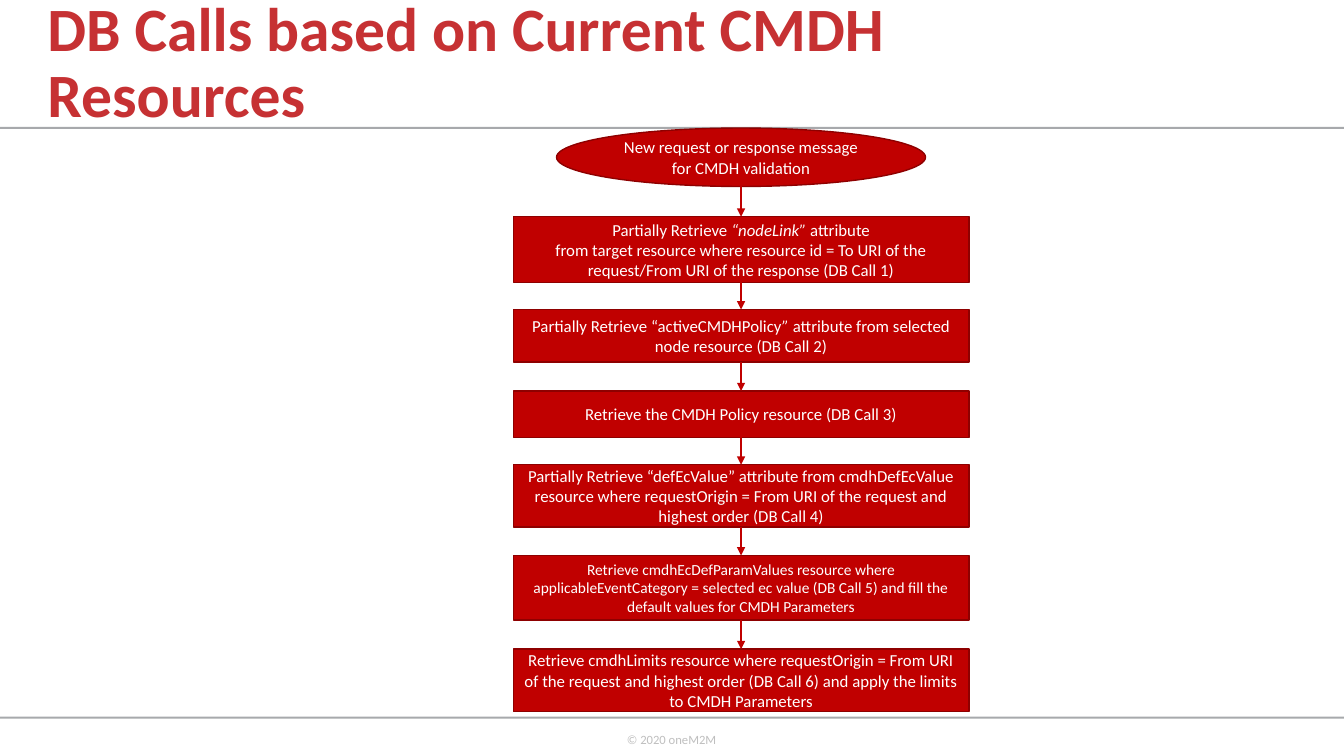
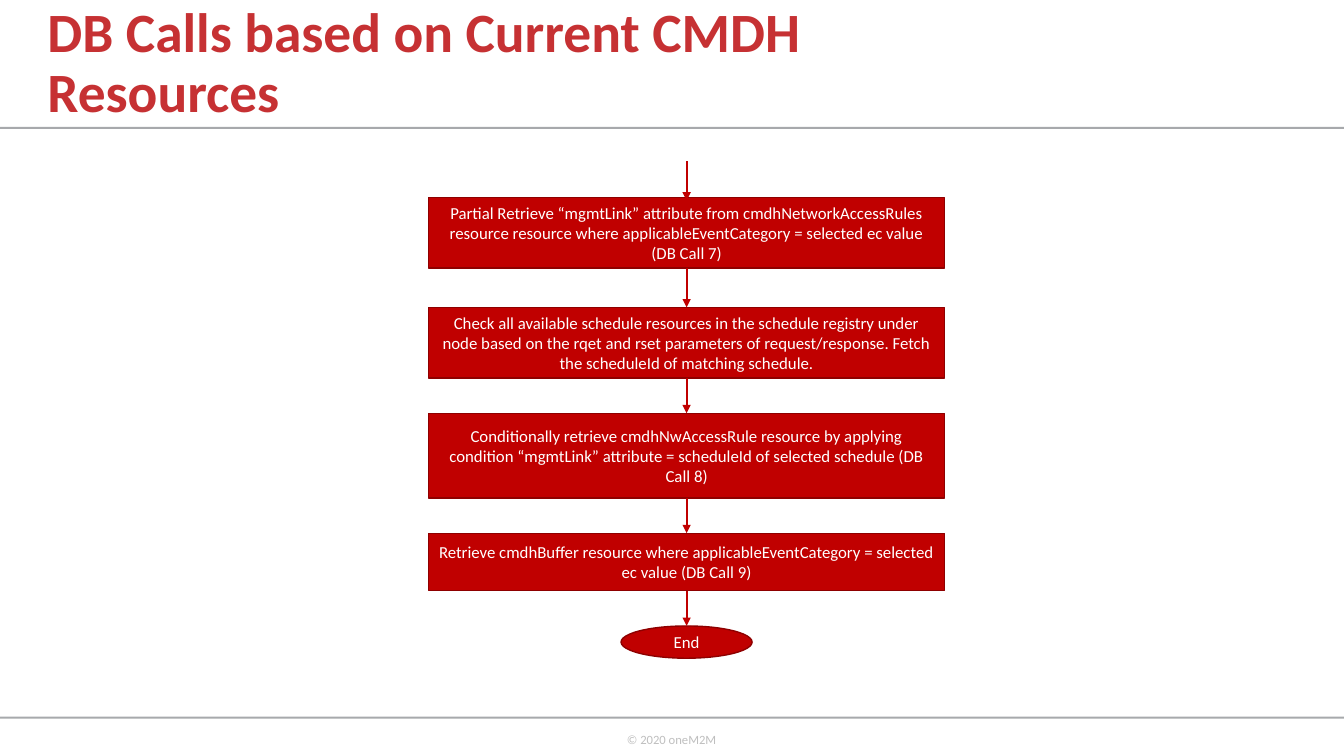
from lxml import etree
from pptx import Presentation
from pptx.dml.color import RGBColor
from pptx.enum.shapes import MSO_CONNECTOR, MSO_SHAPE
from pptx.enum.text import MSO_ANCHOR, PP_ALIGN
from pptx.oxml.ns import qn
from pptx.util import Emu, Pt

PX = 9144
WIDTH, HEIGHT = 1333, 750
FONT = "Calibri"
TITLE = "DB Calls based on Current CMDH Resources"
FOOTER = "© 2020 oneM2M"

TITLE_RED = RGBColor(0xC6, 0x31, 0x33)
BOX_RED = RGBColor(0xC0, 0x00, 0x00)
EDGE_RED = RGBColor(0x8E, 0x00, 0x00)
RULE_GREY = RGBColor(0xA7, 0xA9, 0xAC)
FOOTER_GREY = RGBColor(0xBF, 0xBF, 0xBF)
WHITE = RGBColor(0xFF, 0xFF, 0xFF)

OVAL, RECT = MSO_SHAPE.OVAL, MSO_SHAPE.RECTANGLE

REQUEST_STEPS = [
    (OVAL, 127, 366, 58, 12, "New request or response message for CMDH validation"),
    (RECT, 215, 452, 65, 12,
     "Partially Retrieve *“nodeLink” *attribute\nfrom target resource where resource id = "
     "To URI of the request/From URI of the response (DB Call 1)"),
    (RECT, 307, 452, 52, 12,
     "Partially Retrieve “activeCMDHPolicy*” *attribute from selected node resource (DB Call 2)"),
    (RECT, 388, 452, 46, 12, "Retrieve the CMDH Policy resource (DB Call 3)"),
    (RECT, 461, 452, 62, 12,
     "Partially Retrieve “defEcValue” attribute from cmdhDefEcValue resource where "
     "requestOrigin = From URI of the request and highest order (DB Call 4)"),
    (RECT, 551, 452, 64, 11,
     "Retrieve cmdhEcDefParamValues resource where applicableEventCategory = selected ec value "
     "(DB Call 5) and fill the default values for CMDH Parameters"),
    (RECT, 644, 452, 62, 12,
     "Retrieve cmdhLimits resource where requestOrigin = From URI of the request and highest "
     "order (DB Call 6) and apply the limits to CMDH Parameters"),
]

SCHEDULE_STEPS = [
    (RECT, 196, 512, 70, 12,
     "Partial Retrieve “mgmtLink” attribute from cmdhNetworkAccessRules resource resource where "
     "applicableEventCategory = selected ec value (DB Call 7)"),
    (RECT, 305, 512, 70, 12,
     "Check all available schedule resources in the schedule registry under node based on the "
     "rqet and rset parameters of request/response. Fetch the scheduleId of matching schedule."),
    (RECT, 410, 512, 84, 12,
     "Conditionally retrieve cmdhNwAccessRule resource by applying condition “mgmtLink” "
     "attribute = scheduleId of selected schedule (DB Call 8)"),
    (RECT, 529, 512, 57, 12,
     "Retrieve cmdhBuffer resource where applicableEventCategory = selected ec value (DB Call 9)"),
    (OVAL, 621, 130, 32, 12, "End"),
]


def px(*lengths):
    return [Emu(n * PX) for n in lengths]


def write(tf, text, size=12, color=WHITE, bold=False, align=PP_ALIGN.LEFT,
          anchor=MSO_ANCHOR.MIDDLE, wrap=True, spacing=None):
    tf.word_wrap = wrap
    tf.vertical_anchor = anchor
    p = tf.paragraphs[0]
    p.alignment = align
    p.line_spacing = spacing
    for number, line in enumerate(text.split("\n")):
        if number:
            p.add_line_break()
        for index, part in enumerate(line.split("*")):
            r = p.add_run()
            r.text = part
            r.font.name = FONT
            r.font.size = Pt(size)
            r.font.bold = bold
            r.font.italic = index % 2 == 1
            r.font.color.rgb = color


class Deck:
    def __init__(self):
        self.prs = Presentation()
        self.prs.slide_width, self.prs.slide_height = px(WIDTH, HEIGHT)
        self.s = None

    def slide(self, title_size):
        self.s = self.prs.slides.add_slide(self.prs.slide_layouts[5])
        for top in (126, 711):
            self.shape(RECT, 0, top, WIDTH, 2, RULE_GREY)
        footer = self.s.shapes.add_textbox(*px(612, 721, 112, 40))
        write(footer.text_frame, FOOTER, size=9, color=FOOTER_GREY,
              anchor=MSO_ANCHOR.TOP, wrap=False)
        title = self.s.shapes.title
        title.left, title.top, title.width, title.height = px(37, 0, 859, 128)
        write(title.text_frame, TITLE, size=title_size, color=TITLE_RED,
              bold=True, spacing=0.9)

    def shape(self, kind, left, top, width, height, fill, edge=None):
        sp = self.s.shapes.add_shape(kind, *px(left, top, width, height))
        sp.shadow.inherit = False
        sp.fill.solid()
        sp.fill.fore_color.rgb = fill
        if edge is None:
            sp.line.fill.background()
        else:
            sp.line.color.rgb = edge
            sp.line.width = Pt(1)
        return sp

    def step(self, center, kind, top, width, height, size, text):
        sp = self.shape(kind, center - width // 2, top, width, height, BOX_RED, EDGE_RED)
        write(sp.text_frame, text, size=size, align=PP_ALIGN.CENTER)

    def arrow(self, x, top, bottom):
        line = self.s.shapes.add_connector(MSO_CONNECTOR.STRAIGHT, *px(x, top, x, bottom))
        line.line.color.rgb = BOX_RED
        line.line.width = Pt(1.5)
        ln = line._element.spPr.find(qn("a:ln"))
        etree.SubElement(ln, qn("a:tailEnd"), type="triangle")
        etree.SubElement(line._element.spPr, qn("a:effectLst"))

    def flow(self, center, steps):
        previous_bottom = None
        for kind, top, width, height, size, text in steps:
            self.step(center, kind, top, width, height, size, text)
            if previous_bottom is not None:
                self.arrow(center, previous_bottom, top)
            previous_bottom = top + height


def main():
    deck = Deck()
    deck.slide(44)
    deck.flow(735, REQUEST_STEPS)
    deck.slide(39.6)
    deck.flow(681, SCHEDULE_STEPS)
    deck.arrow(681, 160, 199)
    deck.prs.save("out.pptx")


if __name__ == "__main__":
    main()
